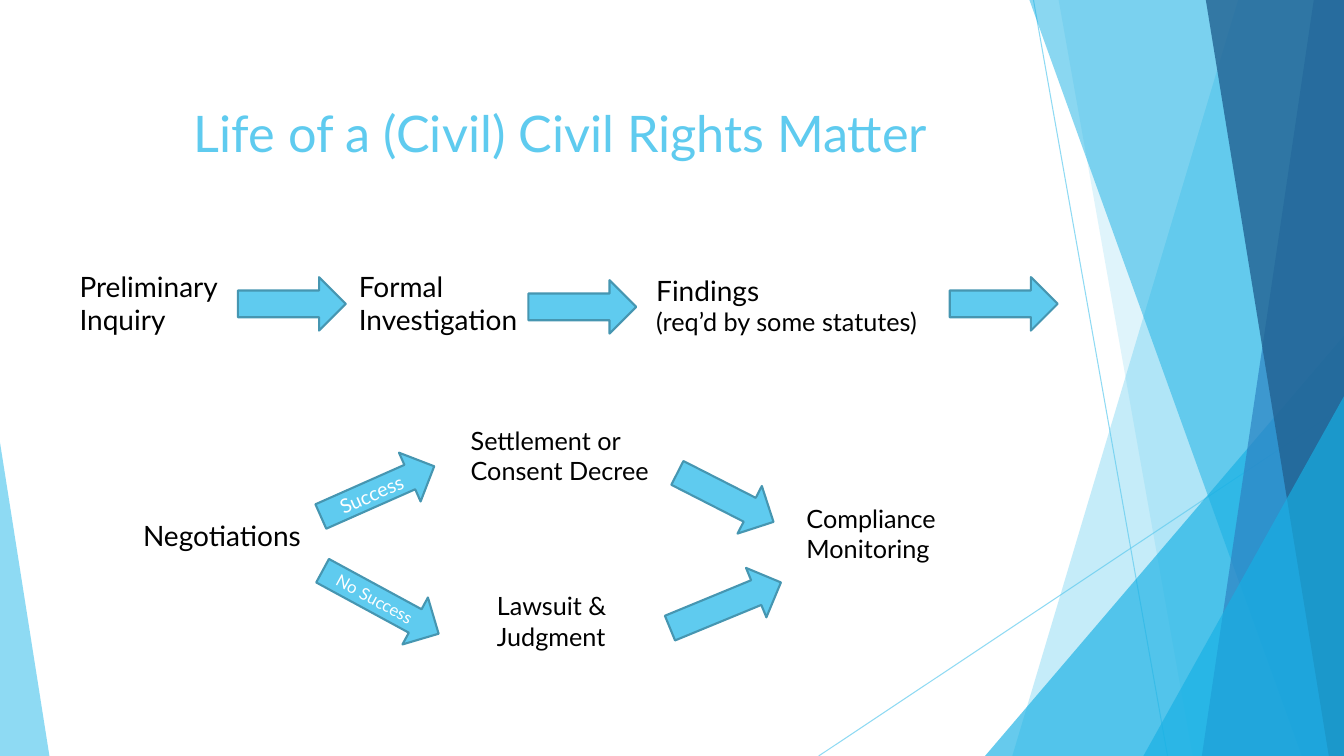
from dataclasses import dataclass

from lxml import etree
from pptx import Presentation
from pptx.dml.color import RGBColor
from pptx.enum import shapes, text
from pptx.oxml.ns import qn
from pptx.util import Inches, Pt


@dataclass(frozen=True)
class Theme:
    font: str = "Lato"
    sky: str = "5FCBEF"
    cyan: str = "17B0E4"
    blue: str = "2E83C3"
    navy: str = "226292"
    outline: str = "4696B1"
    ink: str = "000000"
    white: str = "FFFFFF"
    title: int = 36
    step: int = 20
    body: int = 18
    label: int = 14
    small: int = 12


THEME = Theme()


@dataclass(frozen=True)
class Box:
    left: float
    top: float
    width: float
    height: float

    def inner(self, dx, dy, width, height):
        """Return a box offset from this one's top left corner."""
        return Box(self.left + dx, self.top + dy, width, height)

    def emu(self):
        return [Inches(n) for n in (self.left, self.top, self.width, self.height)]


def paint(fill, color, opacity=100):
    fill.solid()
    fill.fore_color.rgb = RGBColor.from_string(color)
    if opacity < 100:
        color_node = fill._xPr.find(".//" + qn("a:srgbClr"))
        etree.SubElement(color_node, qn("a:alpha"), val=str(opacity * 1000))


def write(frame, lines, size, color=THEME.ink, align=text.PP_ALIGN.LEFT,
          anchor=text.MSO_ANCHOR.TOP):
    """Fill a frame with one paragraph per line; a (words, size) line sets its own size."""
    frame.word_wrap = True
    frame.vertical_anchor = anchor
    for index, line in enumerate(lines):
        words, points = line if isinstance(line, tuple) else (line, size)
        para = frame.paragraphs[0] if index == 0 else frame.add_paragraph()
        para.alignment = align
        span = para.add_run()
        span.text = words
        span.font.name = THEME.font
        span.font.size = Pt(points)
        span.font.color.rgb = RGBColor.from_string(color)


def add_label(page, box, *lines, size=THEME.body):
    write(page.shapes.add_textbox(*box.emu()).text_frame, lines, size)


def add_arrow(page, box, rotation=0, label=None, size=THEME.label):
    arrow = page.shapes.add_shape(shapes.MSO_SHAPE.RIGHT_ARROW, *box.emu())
    arrow.shadow.inherit = False
    arrow.rotation = rotation
    paint(arrow.fill, THEME.sky)
    paint(arrow.line.fill, THEME.outline)
    arrow.line.width = Pt(1.5)
    if label:
        write(arrow.text_frame, [label], size, THEME.white,
              text.PP_ALIGN.CENTER, text.MSO_ANCHOR.MIDDLE)


def add_triangle(page, box, apex, color, opacity):
    """Add a triangle whose apex sits at the given share of its width."""
    triangle = page.shapes.add_shape(shapes.MSO_SHAPE.ISOSCELES_TRIANGLE, *box.emu())
    triangle.adjustments[0] = apex
    finish_facet(triangle, color, opacity)


def add_band(page, box, top_x, bottom_x, color, opacity):
    """Add a full-height band from a slanted left edge to the box's right edge."""
    right, bottom = box.left + box.width, box.top + box.height
    corners = [(box.left + top_x, box.top), (right, box.top),
               (right, bottom), (box.left + bottom_x, bottom)]
    points = [(Inches(x), Inches(y)) for x, y in corners]
    builder = page.shapes.build_freeform(*points[0])
    builder.add_line_segments(points[1:], close=True)
    finish_facet(builder.convert_to_shape(), color, opacity)


def finish_facet(facet, color, opacity):
    facet.shadow.inherit = False
    facet.line.fill.background()
    paint(facet.fill, color, opacity)


def add_hairline(page, box, start, end):
    ends = [Inches(n) for x, y in (start, end) for n in (box.left + x, box.top + y)]
    line = page.shapes.add_connector(shapes.MSO_CONNECTOR.STRAIGHT, *ends)
    paint(line.line.fill, THEME.sky, 70)
    line.line.width = Pt(0.75)
    etree.SubElement(line._element.spPr, qn("a:effectLst"))


def draw_facets(page, box):
    add_hairline(page, box, (2.13, 0), (3.46, box.height))
    add_hairline(page, box, (box.width, 4.03), (0, box.height))
    add_band(page, box, 4.16, 1.92, THEME.sky, 36)
    add_band(page, box, 2.38, 3.71, THEME.sky, 20)
    add_triangle(page, box.inner(1.65, 3.33, 3.56, 4.17), 1, THEME.cyan, 66)
    add_band(page, box, 2.09, 4.79, THEME.cyan, 50)
    add_band(page, box, 4.91, 3.8, THEME.blue, 70)
    add_band(page, box, 3.84, 5.06, THEME.navy, 80)
    add_triangle(page, box.inner(3.22, 3.93, 1.99, 3.57), 1, THEME.cyan, 66)


def draw_title(page, box, words):
    title = page.shapes.title
    title.left, title.top, title.width, title.height = box.emu()
    write(title.text_frame, [words], THEME.title, THEME.sky, text.PP_ALIGN.CENTER)


def draw_investigation(page, box):
    steps = [
        (0, 0, 1.71, ["Preliminary", "Inquiry"]),
        (2.77, 0, 1.81, ["Formal", "Investigation"]),
        (5.72, 0.04, 2.99, ["Findings", ("(req’d by some statutes)", THEME.body)]),
    ]
    for dx, dy, width, lines in steps:
        add_label(page, box.inner(dx, dy, width, 0.77), *lines, size=THEME.step)
    for dx, dy in [(1.67, 0.13), (4.55, 0.16), (8.73, 0.13)]:
        add_arrow(page, box.inner(dx, dy, 1.07, 0.53))


def draw_outcomes(page, box):
    add_label(page, box.inner(0, 0.92, 2.45, 0.44), "Negotiations", size=THEME.step)
    add_arrow(page, box.inner(1.81, 0.44, 1.23, 0.53), 336.1, "Success")
    add_arrow(page, box.inner(1.8, 1.54, 1.31, 0.53), 28.5, "No Success", THEME.small)
    add_label(page, box.inner(3.25, 0, 1.97, 0.71), "Settlement or", "Consent Decree")
    add_label(page, box.inner(3.51, 1.64, 1.32, 0.71), "Lawsuit &", "Judgment")
    add_arrow(page, box.inner(5.34, 0.5, 1.07, 0.53), 27)
    add_arrow(page, box.inner(5.28, 1.57, 1.19, 0.53), 337.6)
    add_label(page, box.inner(6.58, 0.77, 1.59, 0.71), "Compliance", "Monitoring")


def main():
    deck = Presentation()
    deck.slide_width, deck.slide_height = Inches(13.33), Inches(7.5)
    page = deck.slides.add_slide(deck.slide_layouts.get_by_name("Title Only"))
    draw_facets(page, Box(8.12, 0, 5.21, 7.5))
    add_triangle(page, Box(0, 4.39, 0.49, 3.11), 0, THEME.sky, 70)
    draw_title(page, Box(0.86, 0.96, 9.4, 1.44), "Life of a (Civil) Civil Rights Matter")
    draw_investigation(page, Box(0.69, 2.62, 9.8, 0.81))
    draw_outcomes(page, Box(1.32, 4.17, 8.17, 2.35))
    deck.save("out.pptx")


if __name__ == "__main__":
    main()
